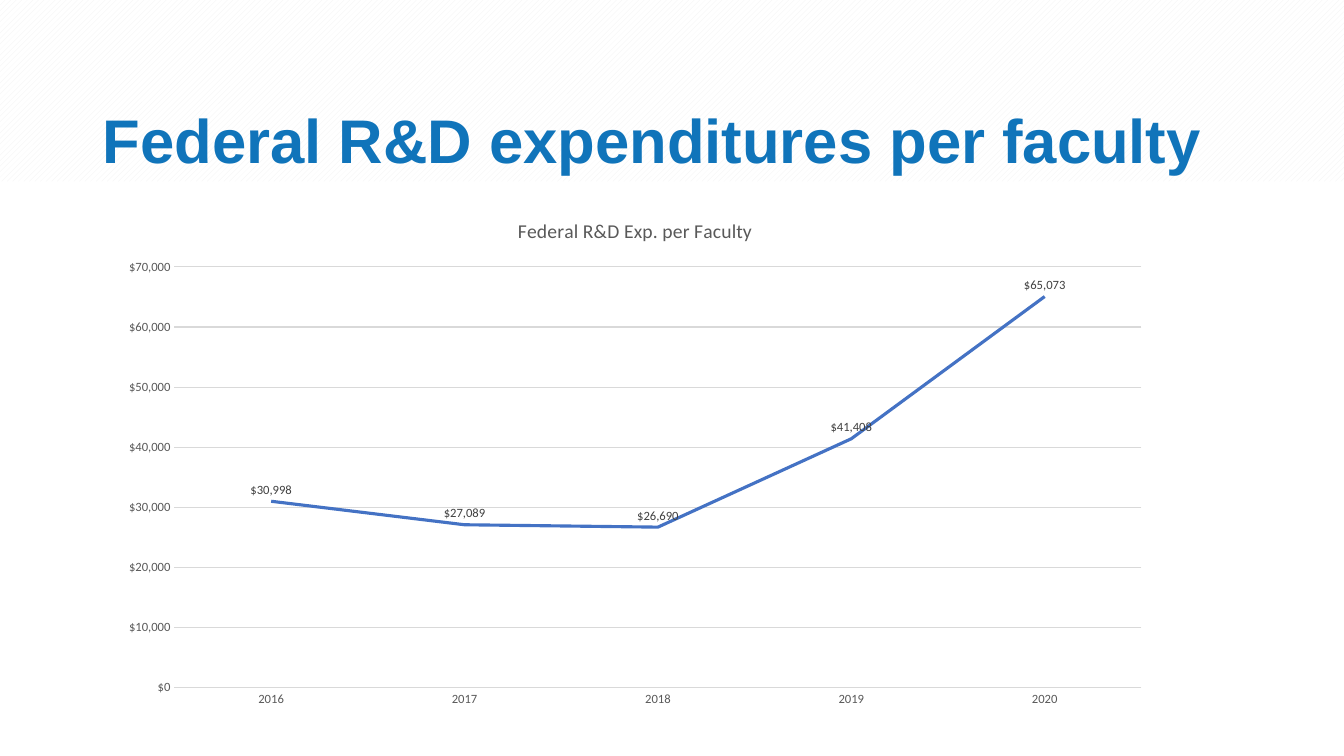
import pptx
import pptx.util
import pptx.chart.data
import pptx.dml.color
import pptx.enum.chart
import pptx.enum.dml
import pptx.enum.shapes
import pptx.enum.text
from dataclasses import dataclass

# Content
HEADING = "Federal R&D expenditures per faculty"
CHART_TITLE = "Federal R&D Exp. per Faculty"
SPENDING = {"2016": 30998, "2017": 27089, "2018": 26690, "2019": 41408, "2020": 65073}
DOLLARS = '"$"#,##0'

# Layout: slide size in inches, then left, top, width, height as shares of it
WIDTH, HEIGHT = 13.33, 7.5
BAND = (0, 0, 1, 0.24)
HEADING_AREA = (0.92 / WIDTH, 0.4 / HEIGHT, 11.5 / WIDTH, 1.4 / HEIGHT)
CHART_AREA = (1.07 / WIDTH, 1.96 / HEIGHT, 10.46 / WIDTH, 5.15 / HEIGHT)


@dataclass(frozen=True)
class Theme:
    heading_font: str = "Arial"
    chart_font: str = "Calibri"
    heading: str = "1074BA"
    series: str = "4472C4"
    text: str = "595959"
    label: str = "404040"
    grid: str = "D9D9D9"
    stripe: str = "F2F2F2"
    paper: str = "FFFFFF"
    heading_size: float = 44
    chart_title_size: float = 14
    label_size: float = 9
    grid_width: float = 0.75
    series_width: float = 2.25


THEME = Theme()


def color(code):
    return pptx.dml.color.RGBColor.from_string(code)


def place(area):
    return [pptx.util.Inches(share * side)
            for share, side in zip(area, (WIDTH, HEIGHT) * 2)]


def style_font(font, name, size, code, bold=False):
    font.name, font.size, font.bold = name, pptx.util.Pt(size), bold
    font.color.rgb = color(code)


def style_line(line, code, width):
    line.color.rgb = color(code)
    line.width = pptx.util.Pt(width)


def add_band(page):
    band = page.shapes.add_shape(pptx.enum.shapes.MSO_SHAPE.RECTANGLE, *place(BAND))
    band.shadow.inherit = False
    band.fill.patterned()
    band.fill.pattern = pptx.enum.dml.MSO_PATTERN.WIDE_UPWARD_DIAGONAL
    band.fill.fore_color.rgb = color(THEME.stripe)
    band.fill.back_color.rgb = color(THEME.paper)
    band.line.fill.background()


def add_heading(page):
    frame = page.shapes.add_textbox(*place(HEADING_AREA)).text_frame
    frame.word_wrap = True
    frame.vertical_anchor = pptx.enum.text.MSO_ANCHOR.BOTTOM
    frame.text = HEADING
    para = frame.paragraphs[0]
    para.line_spacing = 0.9
    style_font(para.runs[0].font, THEME.heading_font, THEME.heading_size,
               THEME.heading, bold=True)


def add_spending_chart(page):
    data = pptx.chart.data.CategoryChartData(number_format=DOLLARS)
    data.categories = list(SPENDING)
    data.add_series(CHART_TITLE, list(SPENDING.values()))
    chart = page.shapes.add_chart(
        pptx.enum.chart.XL_CHART_TYPE.LINE, *place(CHART_AREA), data).chart
    style_font(chart.font, THEME.chart_font, THEME.label_size, THEME.text)
    chart.has_legend = False

    # Chart title
    chart.has_title = True
    frame = chart.chart_title.text_frame
    frame.text = CHART_TITLE
    style_font(frame.paragraphs[0].runs[0].font, THEME.chart_font,
               THEME.chart_title_size, THEME.text)
    chart.chart_title.include_in_layout = False

    # Axes
    years, amounts = chart.category_axis, chart.value_axis
    for axis in (years, amounts):
        axis.major_tick_mark = axis.minor_tick_mark = pptx.enum.chart.XL_TICK_MARK.NONE
        style_font(axis.tick_labels.font, THEME.chart_font, THEME.label_size, THEME.text)
    style_line(years.format.line, THEME.grid, THEME.grid_width)
    amounts.format.line.fill.background()
    amounts.minimum_scale, amounts.maximum_scale, amounts.major_unit = 0, 70000, 10000
    amounts.has_major_gridlines = True
    style_line(amounts.major_gridlines.format.line, THEME.grid, THEME.grid_width)
    amounts.tick_labels.number_format = DOLLARS
    amounts.tick_labels.number_format_is_linked = False

    # Line and its value labels
    plot = chart.plots[0]
    plot.vary_by_categories = False
    series = plot.series[0]
    series.smooth = False
    series.marker.style = pptx.enum.chart.XL_MARKER_STYLE.NONE
    style_line(series.format.line, THEME.series, THEME.series_width)
    labels = series.data_labels
    labels.show_value = True
    labels.position = pptx.enum.chart.XL_LABEL_POSITION.ABOVE
    labels.number_format = DOLLARS
    labels.number_format_is_linked = False
    style_font(labels.font, THEME.chart_font, THEME.label_size, THEME.label)


def main():
    deck = pptx.Presentation()
    deck.slide_width = pptx.util.Inches(WIDTH)
    deck.slide_height = pptx.util.Inches(HEIGHT)
    page = deck.slides.add_slide(deck.slide_layouts[6])
    add_band(page)
    add_heading(page)
    add_spending_chart(page)
    deck.save("out.pptx")


if __name__ == "__main__":
    main()
